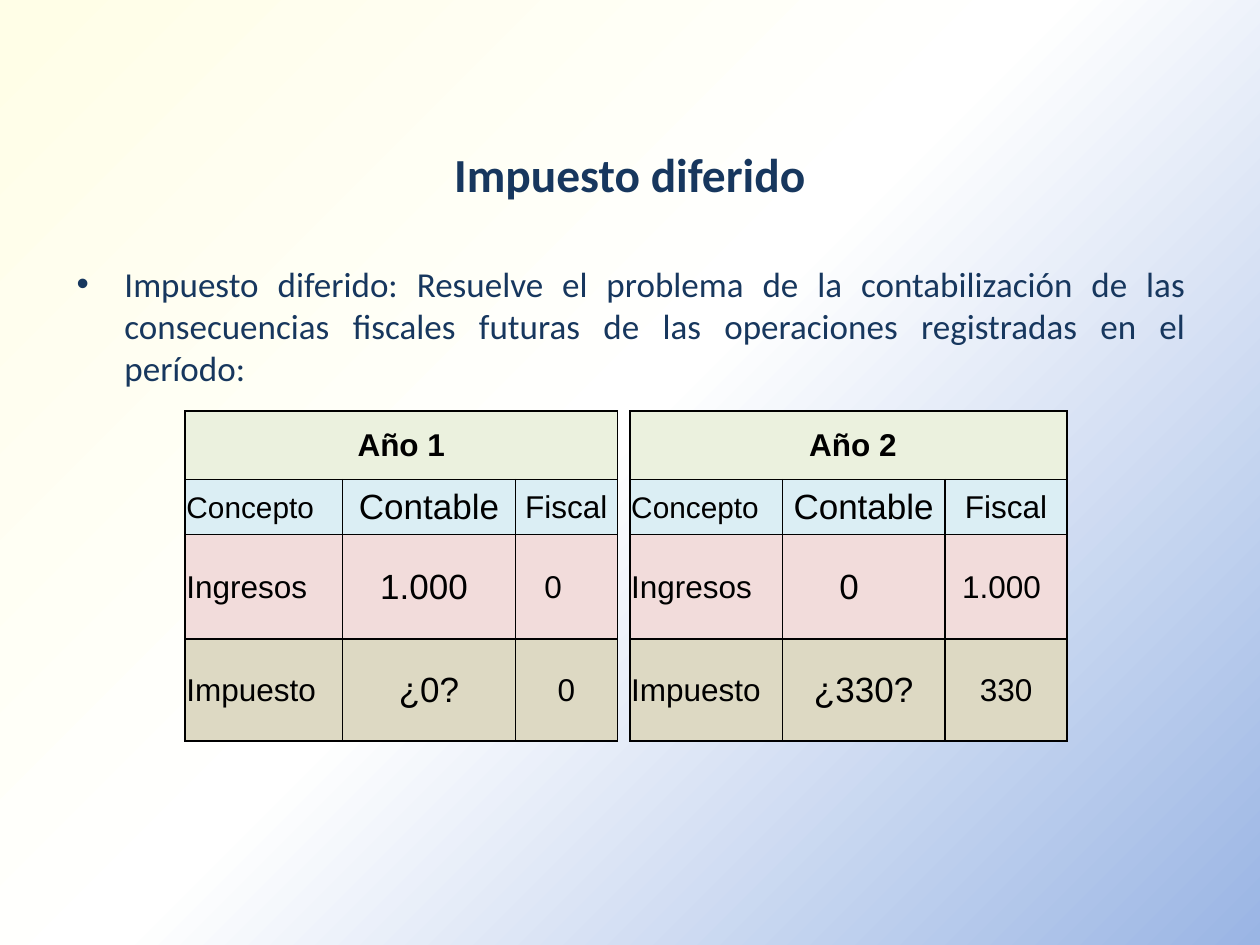
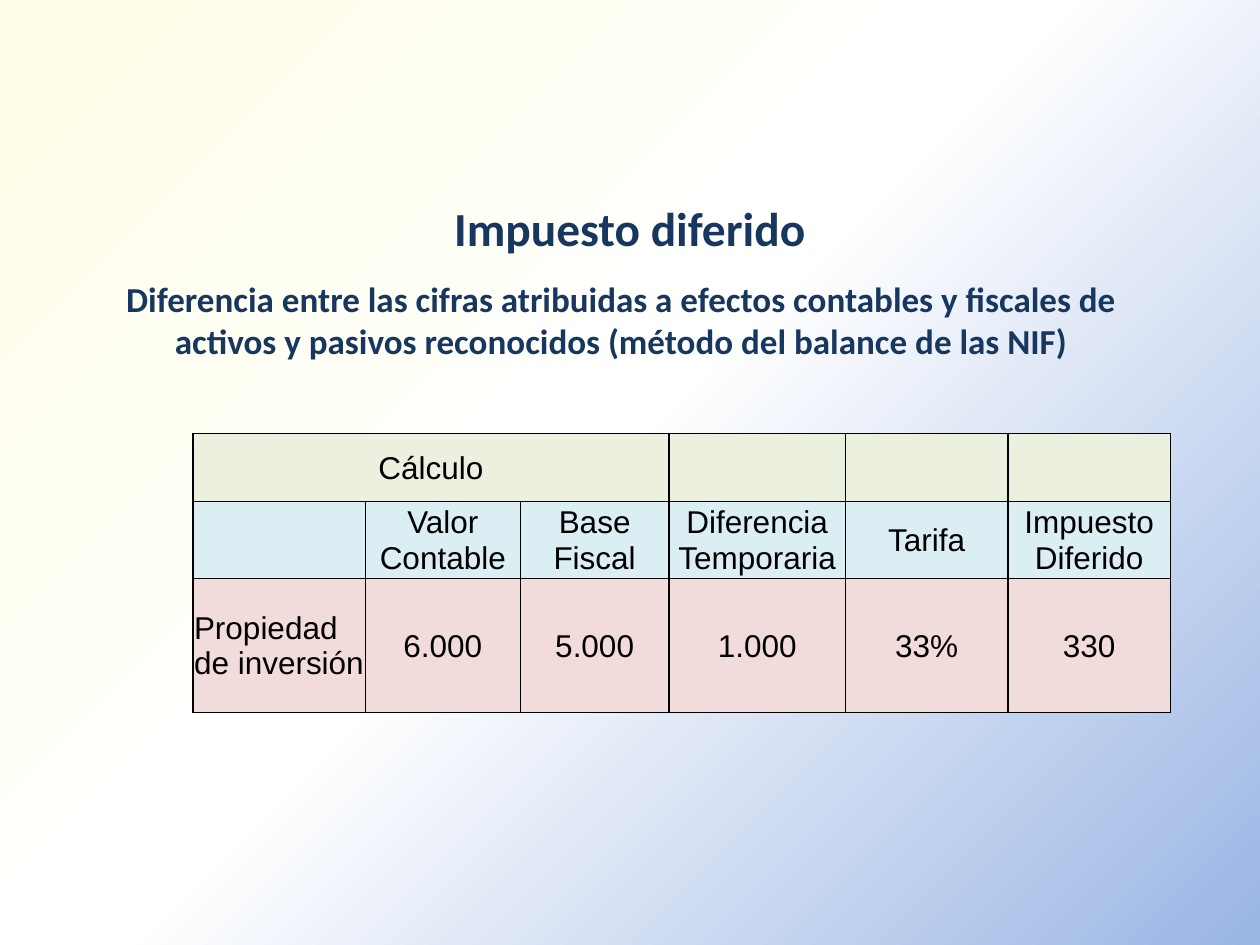
from lxml import etree
from pptx import Presentation, util as u
from pptx.dml.color import RGBColor
from pptx.enum import text
from pptx.oxml import ns

# Shared look
NAVY = RGBColor(0x17, 0x37, 0x5E)
BLACK = RGBColor(0, 0, 0)
GREEN = RGBColor(0xEB, 0xF1, 0xDE)
BLUE = RGBColor(0xDB, 0xEE, 0xF4)
PINK = RGBColor(0xF2, 0xDC, 0xDB)
TAN = RGBColor(0xDD, 0xD9, 0xC3)
ROW_FILLS = [GREEN, BLUE, PINK, TAN]
BACKGROUND_STOPS = [
    (1, RGBColor(0xFF, 0xFE, 0xE7)),
    (48, RGBColor(0xFF, 0xFF, 0xFF)),
    (100, RGBColor(0x9A, 0xB5, 0xE4)),
]
HEADING_FONT, TABLE_FONT = "Calibri", "Arial"
WIDTH, HEIGHT = u.Inches(10), u.Inches(7.5)
HEADER_SPAN = 3
CENTER, LEFT = text.PP_ALIGN.CENTER, text.PP_ALIGN.LEFT


def across(percent):
    return round(WIDTH * percent / 100)


def down(percent):
    return round(HEIGHT * percent / 100)


def add_node(parent, tag, **attributes):
    node = etree.SubElement(parent, ns.qn(tag))
    for name, value in attributes.items():
        node.set(name, str(value))
    return node


def paint_background(master):
    """Diagonal gradient that every page inherits."""
    fill = master.background.fill
    fill.gradient()
    fill.gradient_angle = 315
    stops = master.element.find(".//" + ns.qn("a:gsLst"))
    for stop in list(stops):
        stops.remove(stop)
    for position, color in BACKGROUND_STOPS:
        stop = add_node(stops, "a:gs", pos=position * 1000)
        add_node(stop, "a:srgbClr", val=color)


def add_span(para, words, font, size, color, bold=False):
    span = para.add_run()
    span.text = words
    span.font.name = font
    span.font.size = u.Pt(size)
    span.font.color.rgb = color
    span.font.bold = bold


def add_text(page, area, words, size, bold=False, align=CENTER, bullet=False):
    """Heading-font text in an area given as percentages of the slide."""
    left, top, width, height = area
    box = page.shapes.add_textbox(across(left), down(top), across(width), down(height))
    box.text_frame.word_wrap = True
    para = box.text_frame.paragraphs[0]
    para.alignment = align
    if bullet:
        properties = para._p.get_or_add_pPr()
        indent = u.Inches(0.38)
        properties.set("marL", str(indent))
        properties.set("indent", str(-indent))
        add_node(properties, "a:buFont", typeface=TABLE_FONT)
        add_node(properties, "a:buChar", char="•")
    add_span(para, words, HEADING_FONT, size, NAVY, bold)


def add_title(page, top):
    add_text(page, (5, top, 90, 14), "Impuesto diferido", 27.1, bold=True)


def style_cell(cell, fill):
    properties = cell._tc.get_or_add_tcPr()
    for side in ("a:lnL", "a:lnR", "a:lnT", "a:lnB"):
        line = add_node(properties, side, w=u.Pt(1))
        add_node(add_node(line, "a:solidFill"), "a:srgbClr", val=BLACK)
    cell.fill.solid()
    cell.fill.fore_color.rgb = fill
    cell.vertical_anchor = text.MSO_ANCHOR.MIDDLE
    cell.margin_left = cell.margin_right = cell.margin_top = u.Inches(0.01)
    cell.margin_bottom = 0


def add_grid(page, left, top, columns, rows, content, sizes, bold_header=False,
             size_at=None, right_gaps=None, left_gaps=None):
    """Table; sizes are per column, gaps (inches) and size_at are per (row, column)."""
    frame = page.shapes.add_table(len(rows), len(columns), across(left), down(top),
                                  across(sum(columns)), down(sum(rows)))
    grid = frame.table
    grid.first_row = grid.horz_banding = False
    for column, share in zip(grid.columns, columns):
        column.width = across(share)
    for row, share in zip(grid.rows, rows):
        row.height = down(share)

    for r, row in enumerate(content):
        for c, words in enumerate(row):
            cell = grid.cell(r, c)
            style_cell(cell, ROW_FILLS[r])
            if (r, c) in (right_gaps or {}):
                cell.margin_right = u.Inches(right_gaps[r, c])
            if (r, c) in (left_gaps or {}):
                cell.margin_left = u.Inches(left_gaps[r, c])
            para = cell.text_frame.paragraphs[0]
            para.alignment = LEFT if c == 0 and r > 0 else CENTER
            size = (size_at or {}).get((r, c), sizes[c])
            if words:
                add_span(para, words, TABLE_FONT, size, BLACK, bold_header and r == 0)
            else:
                para.font.size = u.Pt(size)
    grid.cell(0, 0).merge(grid.cell(0, HEADER_SPAN - 1))


def add_year(page, left, columns, year, income, tax, **gaps):
    content = [
        [year, "", ""],
        ["Concepto", "Contable", "Fiscal"],
        ["Ingresos", *income],
        ["Impuesto", *tax],
    ]
    add_grid(page, left, 43.47, columns, [7.3, 5.8, 11.07, 10.8], content,
             [18, 20, 18], bold_header=True, size_at={(1, 0): 17}, **gaps)


def build_years(page):
    add_title(page, 14.67)
    add_text(page, (5.1, 27.07, 90, 66),
             "Impuesto diferido: Resuelve el problema de la contabilización de las "
             "consecuencias fiscales futuras de las operaciones registradas en el período:",
             20, align=text.PP_ALIGN.JUSTIFY, bullet=True)
    add_year(page, 14.7, [12.5, 13.7, 8.1], "Año 1", ["1.000", "0"], ["¿0?", "0"],
             right_gaps={(2, 1): 0.09, (2, 2): 0.22})
    add_year(page, 50, [12.1, 12.9, 9.7], "Año 2", ["0", "1.000"], ["¿330?", "330"],
             right_gaps={(2, 1): 0.24, (2, 2): 0.08}, left_gaps={(0, 0): 0.08})


def build_calculation(page):
    add_title(page, 20.4)
    add_text(page, (5.6, 28.67, 87.4, 10),
             "Diferencia entre las cifras atribuidas a efectos contables y fiscales de "
             "activos y pasivos reconocidos (método del balance de las NIF)", 20, bold=True)
    content = [
        ["Cálculo", "", "", "", "", ""],
        ["", "Valor Contable", "Base Fiscal", "Diferencia Temporaria", "Tarifa",
         "Impuesto Diferido"],
        ["Propiedad de inversión", "6.000", "5.000", "1.000", "33%", "330"],
    ]
    add_grid(page, 15.3, 45.87, [13.7, 12.3, 11.8, 14, 12.9, 12.9], [7.2, 8.1, 14.2],
             content, [18] * 6)


def main():
    deck = Presentation()
    deck.slide_width, deck.slide_height = WIDTH, HEIGHT
    paint_background(deck.slide_master)
    blank = deck.slide_layouts[6]
    for build in (build_years, build_calculation):
        build(deck.slides.add_slide(blank))
    deck.save("out.pptx")


if __name__ == "__main__":
    main()
